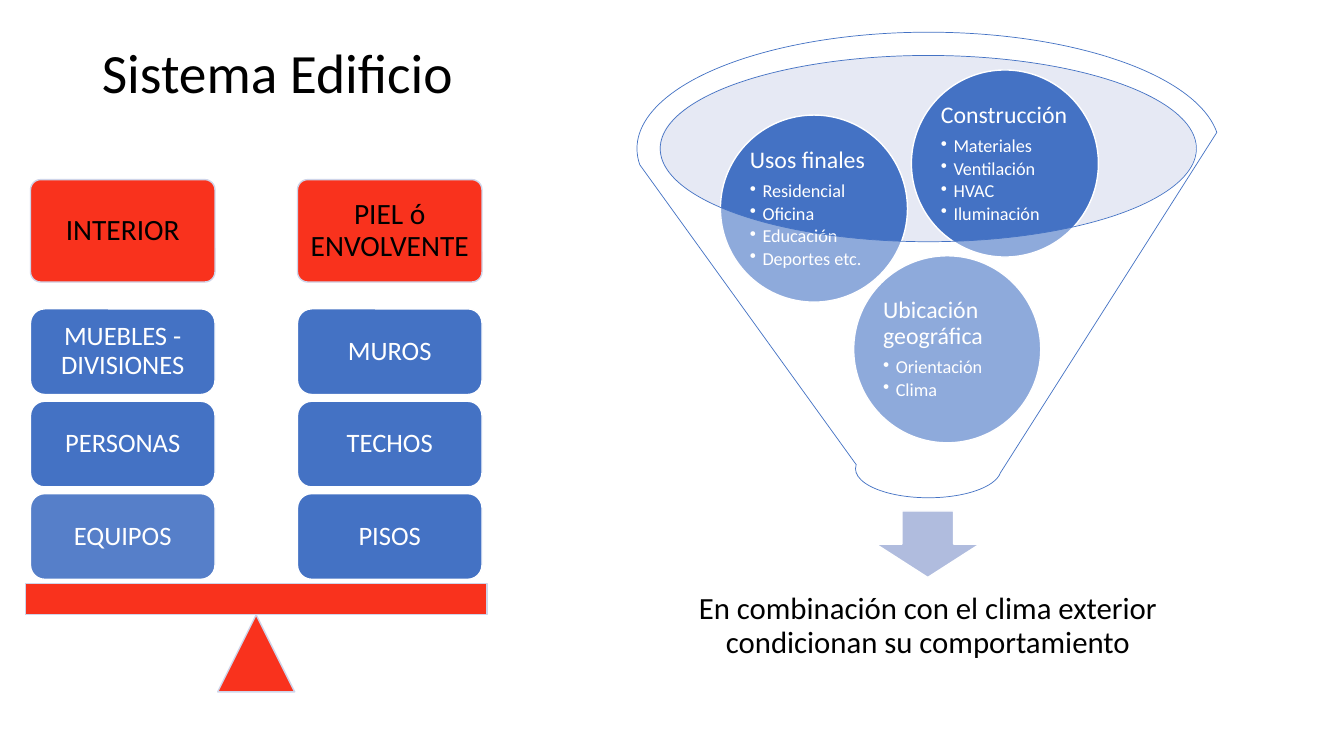
from lxml import etree
from pptx import Presentation
from pptx.dml.color import RGBColor
from pptx.enum.shapes import MSO_SHAPE
from pptx.enum.text import MSO_ANCHOR, MSO_AUTO_SIZE, PP_ALIGN
from pptx.oxml.ns import qn
from pptx.util import Pt

OVAL, FUNNEL, DOWN_ARROW = MSO_SHAPE.OVAL, MSO_SHAPE.FUNNEL, MSO_SHAPE.DOWN_ARROW
ROUNDED, RECTANGLE, TRIANGLE = MSO_SHAPE.ROUNDED_RECTANGLE, MSO_SHAPE.RECTANGLE, MSO_SHAPE.ISOSCELES_TRIANGLE
MIDDLE = MSO_ANCHOR.MIDDLE
LEFT, CENTER = PP_ALIGN.LEFT, PP_ALIGN.CENTER

BLACK = RGBColor(0x00, 0x00, 0x00)
WHITE = RGBColor(0xFF, 0xFF, 0xFF)
BLUE = RGBColor(0x44, 0x72, 0xC4)
PALE_BLUE = RGBColor(0xC1, 0xC9, 0xE4)
ARROW_BLUE = RGBColor(0xB0, 0xBC, 0xDE)
RED = RGBColor(0xF9, 0x1C, 0x05)
PALE_LINE = RGBColor(0xCF, 0xD5, 0xEA)


def draw(kind, box, fill, line=WHITE, line_width=1, opacity=100):
    shape = slide.shapes.add_shape(kind, *[Pt(value) for value in box])
    shape.shadow.inherit = False
    shape.fill.solid()
    shape.fill.fore_color.rgb = fill
    if line is None:
        shape.line.fill.background()
    else:
        shape.line.color.rgb = line
        shape.line.width = Pt(line_width)
    if opacity < 100:
        color = shape.element.spPr.find(qn("a:solidFill")).find(qn("a:srgbClr"))
        etree.SubElement(color, qn("a:alpha"), val=str(opacity * 1000))
    return shape


def write(shape, lines, size, color, margin, alignment=CENTER, bullet_size=13):
    frame = shape.text_frame
    frame_format = {"word_wrap": True, "auto_size": MSO_AUTO_SIZE.NONE, "vertical_anchor": MIDDLE}
    for side in ("left", "top", "right", "bottom"):
        frame_format["margin_" + side] = Pt(margin)
    for name, value in frame_format.items():
        setattr(frame, name, value)
    for index, line in enumerate(lines):
        paragraph = frame.paragraphs[0] if index == 0 else frame.add_paragraph()
        paragraph.text = line
        paragraph.alignment = alignment
        paragraph.line_spacing = 0.9
        if len(lines) > 1:
            paragraph.space_after = Pt(2 if index else 6)
        if index:
            paragraph.level = 1
            properties = paragraph._p.get_or_add_pPr()
            properties.set("marL", str(Pt(9)))
            properties.set("indent", str(Pt(-9)))
            etree.SubElement(properties, qn("a:buChar"), char="•")
        font_format = {"name": "Calibri", "size": Pt(bullet_size if index else size)}
        for name, value in font_format.items():
            setattr(paragraph.font, name, value)
        paragraph.font.color.rgb = color


presentation = Presentation()
presentation.slide_width = Pt(960)
presentation.slide_height = Pt(540)
slide = presentation.slides.add_slide(presentation.slide_layouts[5])

title = slide.shapes.title
title_box = {"left": 65.5, "top": 21, "width": 275, "height": 66}
for name, value in title_box.items():
    setattr(title, name, Pt(value))
write(title, ["Sistema Edificio"], 39.6, BLACK, 7.2, LEFT)

draw(OVAL, (471, 39.5, 383, 133), PALE_BLUE, None, opacity=40)
draw(DOWN_ARROW, (625.7, 365, 74, 47.5), ARROW_BLUE)
caption = slide.shapes.add_textbox(Pt(484.6), Pt(403), Pt(356.4), Pt(89.3))
write(caption, ["En combinación con el clima exterior condicionan su comportamiento"], 22, BLACK, 12)

factors = [
    (609.8, 182.7, ["Ubicación geográfica", "Orientación", "Clima"]),
    (514.6, 82.2, ["Usos finales", "Residencial", "Oficina", "Educación", "Deportes etc."]),
    (651, 50, ["Construcción", "Materiales", "Ventilación", "HVAC", "Iluminación"]),
]
for left, top, lines in factors:
    circle = draw(OVAL, (left, top, 133.6, 133.6), BLUE)
    write(circle, lines, 17, WHITE, 1.5, LEFT)

draw(FUNNEL, (455, 23, 416.2, 332.6), WHITE, BLUE, 0.5, 40)

draw(TRIANGLE, (155.5, 439.2, 55, 55), RED, PALE_LINE, opacity=90)
draw(RECTANGLE, (18, 416.8, 329.8, 22.2), RED, PALE_LINE, opacity=90)

columns = [
    (21.8, "INTERIOR", ["MUEBLES - DIVISIONES", "PERSONAS", "EQUIPOS"]),
    (212.5, "PIEL ó ENVOLVENTE", ["MUROS", "TECHOS", "PISOS"]),
]
for left, heading, items in columns:
    header = draw(ROUNDED, (left, 128.3, 131.8, 73.2), RED, PALE_LINE, opacity=90)
    header.adjustments[0] = 0.1
    write(header, [heading], 21, BLACK, 6.3)
    for row, item in enumerate(items):
        opacity = 90 if item == "EQUIPOS" else 100
        block = draw(ROUNDED, (left, 220.6 + 66 * row, 131.8, 61.2), BLUE, opacity=opacity)
        write(block, [item], 19, WHITE, 5.7)

presentation.save("out.pptx")
